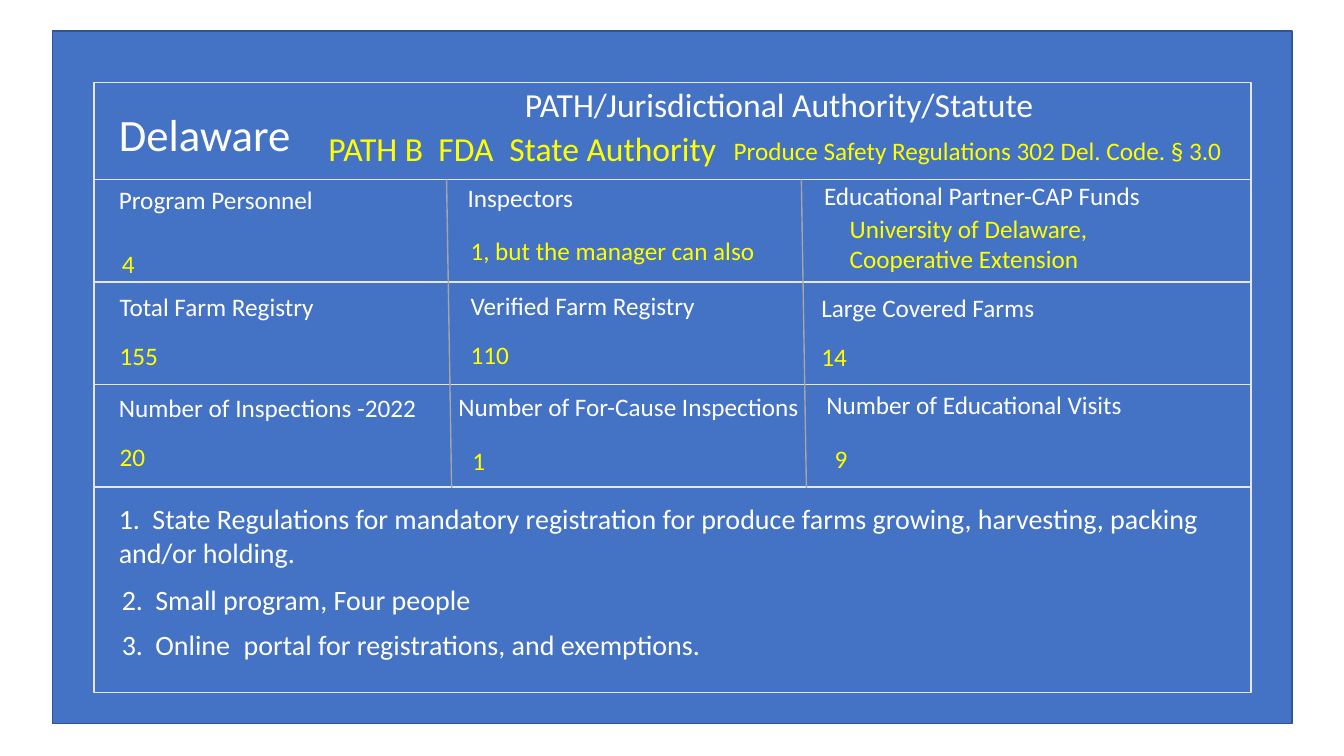
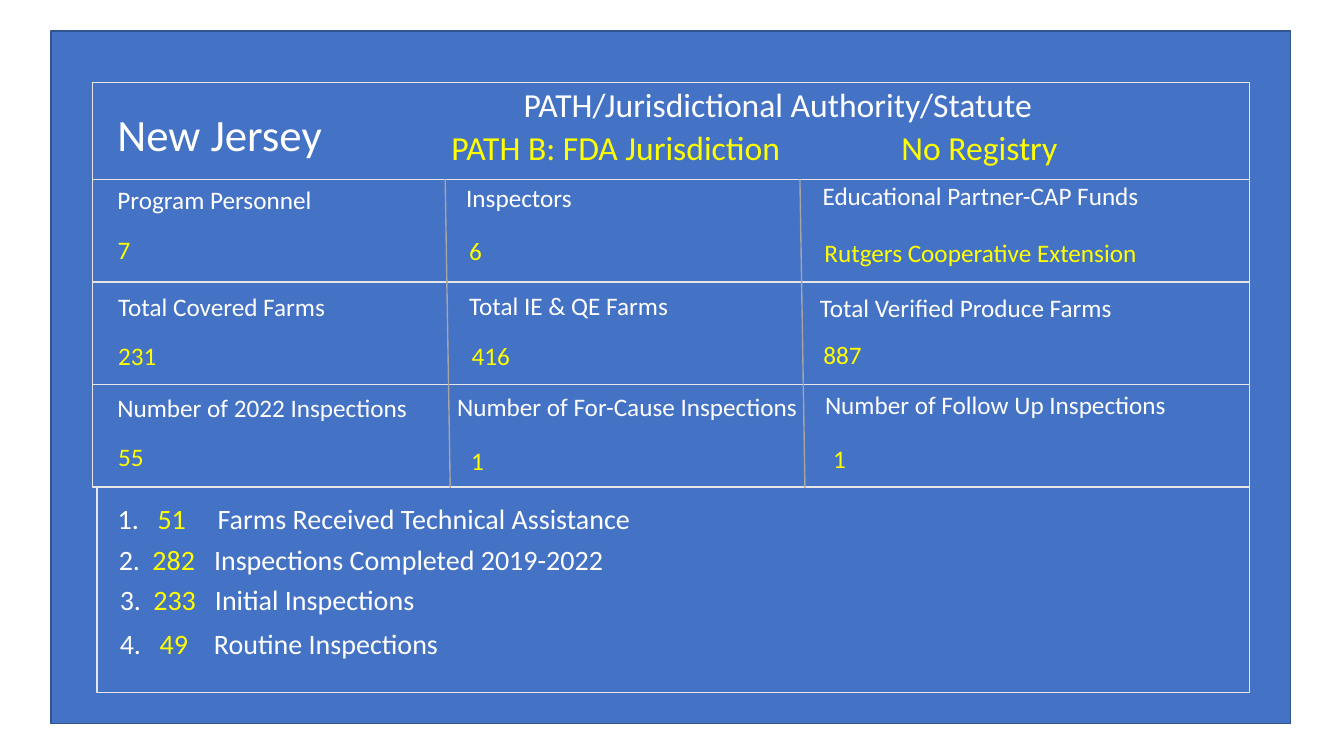
"""Build the state produce-safety summary slides."""
from lxml.etree import SubElement
from pptx import Presentation
from pptx.dml.color import RGBColor
from pptx.enum.shapes import MSO_CONNECTOR as CONN, MSO_SHAPE as SHAPE
from pptx.enum.text import MSO_AUTO_SIZE as AUTO
from pptx.oxml.ns import qn
from pptx.util import Pt

BLUE = RGBColor(0x44, 0x72, 0xC4)
NAVY = RGBColor(0x32, 0x54, 0x91)
PALE = RGBColor(0xE7, 0xE6, 0xE6)
GREY = RGBColor(0xA5, 0xA5, 0xA5)
WHITE = RGBColor(0xFF, 0xFF, 0xFF)
YELLOW = RGBColor(0xFF, 0xFF, 0x00)

FONT = "Calibri"
LEFT, WIDTH = 67, 826.6
HEADER_TOP, ROWS_TOP, ROW_H, NOTES_H = 59, 128.2, 73.2, 146.9
NOTES_TOP = ROWS_TOP + 3 * ROW_H
CELL_W = 336
LABEL_SPOTS = [
    (77.8, 128.2), (326.9, 126.7), (581.5, 125.3),
    (78.3, 204.5), (329, 203.8), (579.6, 205.2),
    (77.8, 276.5), (320.4, 275.8), (583.2, 274.3),
]
VALUE_SPOTS = [
    (78, 163.5), (329, 164.2), (582.8, 166),
    (78.3, 239.8), (329, 239.2), (579.6, 240.4),
    (78.3, 311.8), (330.4, 314.6), (589, 312.8),
]


class Deck:
    def __init__(self):
        self.prs = Presentation()
        self.prs.slide_width, self.prs.slide_height = Pt(960), Pt(540)
        self.s = None
        self.dx = 0

    def new_slide(self, dx):
        self.s = self.prs.slides.add_slide(self.prs.slide_layouts[6])
        self.dx = dx

    def panel(self, x, y, w, h, line=PALE):
        sp = self.s.shapes.add_shape(SHAPE.RECTANGLE, Pt(x + self.dx), Pt(y), Pt(w), Pt(h))
        sp.shadow.inherit = False
        sp.fill.solid()
        sp.fill.fore_color.rgb = BLUE
        sp.line.color.rgb = line
        sp.line.width = Pt(1)

    def divider(self, x1, y1, x2, y2):
        cx = self.s.shapes.add_connector(
            CONN.STRAIGHT, Pt(x1 + self.dx), Pt(y1), Pt(x2 + self.dx), Pt(y2))
        cx.line.color.rgb = GREY
        cx.line.width = Pt(1)
        SubElement(cx._element.spPr, qn("a:effectLst"))

    def text(self, x, y, w, pieces, size=18, tabs=()):
        sp = self.s.shapes.add_textbox(Pt(x + self.dx), Pt(y), Pt(w), Pt(size * 1.2 + 7.2))
        tf = sp.text_frame
        tf.word_wrap = True
        tf.auto_size = AUTO.SHAPE_TO_FIT_TEXT
        p = tf.paragraphs[0]
        for words, color in pieces:
            r = p.add_run()
            r.text = words
            r.font.name = FONT
            r.font.size = Pt(size)
            r.font.color.rgb = color
        if tabs:
            stops = SubElement(p._p.get_or_add_pPr(), qn("a:tabLst"))
            for pos in tabs:
                SubElement(stops, qn("a:tab"), pos=str(Pt(pos)), algn="l")

    def frame(self, state, notes_inset=0):
        self.panel(37.4, 22.3, 885.6, 494.6, NAVY)
        self.panel(LEFT, HEADER_TOP, WIDTH, ROW_H)
        for i in range(3):
            self.panel(LEFT, ROWS_TOP + i * ROW_H, WIDTH, ROW_H)
        self.panel(LEFT + notes_inset, NOTES_TOP, WIDTH - notes_inset, NOTES_H)
        for x in (319, 572.4):
            self.divider(x, ROWS_TOP, x + 3.6, NOTES_TOP + 0.7)
        self.text(77.8, 72.7, 350, [(state, WHITE)], 32)
        self.text(367.9, 56.2, 491, [("PATH/Jurisdictional Authority/Statute", WHITE)], 24)

    def cells(self, pairs, moved):
        for i, (label, value) in enumerate(pairs):
            self.text(*LABEL_SPOTS[i], CELL_W, [(label, WHITE)])
            x, y, w = moved.get(i, (*VALUE_SPOTS[i], CELL_W))
            self.text(x, y, w, [(value, YELLOW)])

    def note(self, x, y, pieces, tabs):
        self.text(x, y, 837, pieces, 20, tabs)


def delaware(deck):
    deck.new_slide(0)
    deck.frame("Delaware")
    deck.text(227.5, 87.8, 350, [("PATH B\tFDA\tState Authority", YELLOW)], 24, (78.6, 129.2))
    deck.text(517, 92.9, 425, [("Produce Safety Regulations 302 Del. Code. § 3.0", YELLOW)])
    deck.cells([
        ("Program Personnel", "4"),
        ("Inspectors", "1, but the manager can also"),
        ("Educational Partner-CAP Funds", "University of Delaware, Cooperative Extension"),
        ("Total Farm Registry", "155"),
        ("Verified Farm Registry", "110"),
        ("Large Covered Farms", "14"),
        ("Number of Inspections -2022", "20"),
        ("Number of For-Cause Inspections", "1"),
        ("Number of Educational Visits", "9"),
    ], {0: (79.9, 174.2, 61), 2: (599.8, 149, 222.5)})
    for x, y, words, tabs in (
        (77.8, 355, "1.\tState Regulations for mandatory registration for produce farms "
                    "growing, harvesting, packing and/or holding.", (24,)),
        (79.9, 412.6, "2.\tSmall program, Four people", (24,)),
        (79.9, 445, "3.\tOnline\tportal for registrations, and exemptions.", (24, 87)),
    ):
        deck.note(x, y, [(words, WHITE)], tabs)


def new_jersey(deck):
    deck.new_slide(-1)
    deck.frame("New Jersey", 3.2)
    deck.text(316.4, 87.1, 513, [("PATH B: FDA Jurisdiction\tNo Registry", YELLOW)], 24, (321.4,))
    deck.cells([
        ("Program Personnel", "7"),
        ("Inspectors", "6"),
        ("Educational Partner-CAP Funds", "Rutgers Cooperative Extension"),
        ("Total Covered Farms", "231"),
        ("Total IE & QE Farms", "416"),
        ("Total Verified Produce Farms", "887"),
        ("Number of 2022 Inspections", "55"),
        ("Number of For-Cause Inspections", "1"),
        ("Number of Follow Up Inspections", "1"),
    ], {4: (330.8, 239.8, CELL_W), 5: (582, 239, CELL_W)})
    for i, (x, y, count, words, tabs) in enumerate((
        (78, 355, "51", "Farms Received Technical Assistance", (28.5, 71.4)),
        (78.8, 383.8, "282", "Inspections Completed 2019-2022", (24, 68)),
        (79.5, 412.6, "233", "Initial Inspections", (24, 68)),
        (79.5, 444.2, "49", "Routine Inspections", (28.5, 67.2)),
    ), 1):
        deck.note(x, y, [(f"{i}.\t", WHITE), (f"{count}\t", YELLOW), (words, WHITE)], tabs)


def main():
    deck = Deck()
    delaware(deck)
    new_jersey(deck)
    deck.prs.save("out.pptx")


if __name__ == "__main__":
    main()
